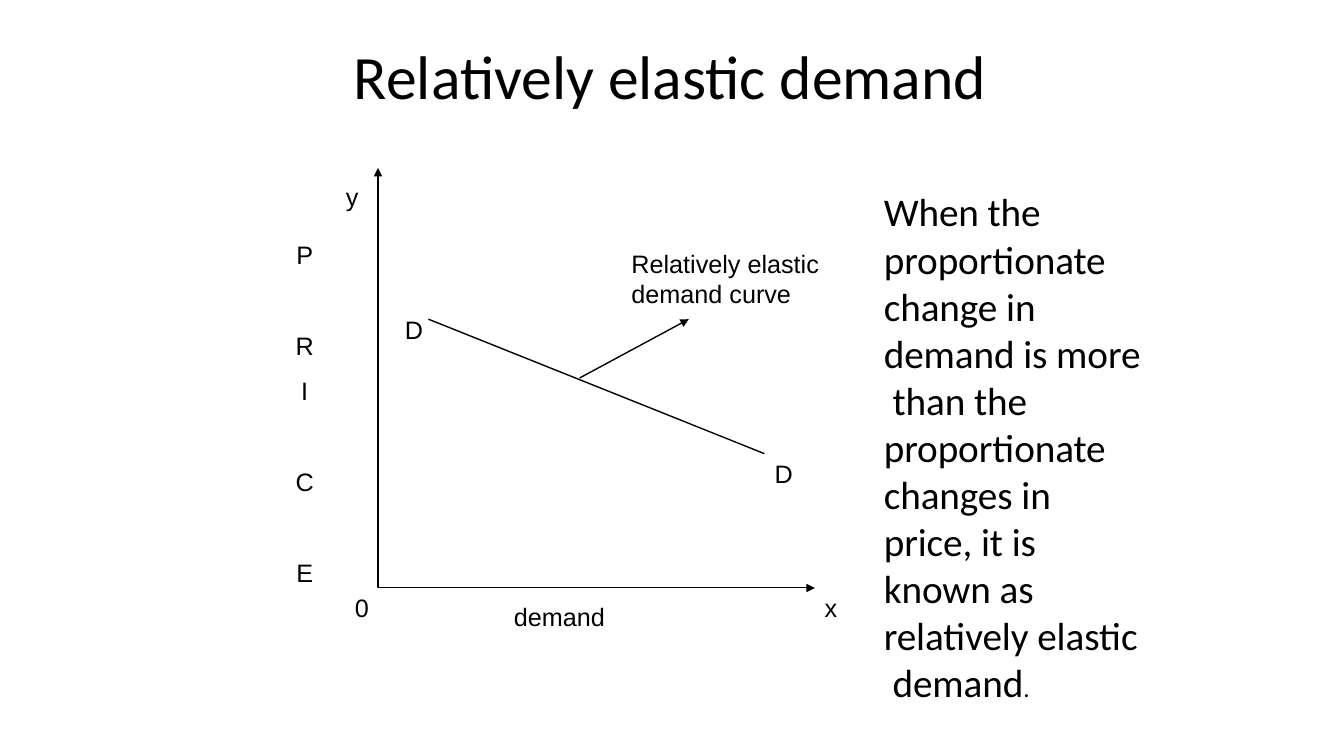
from pptx import Presentation
from pptx.dml.color import RGBColor
from pptx.enum.shapes import MSO_CONNECTOR
from pptx.enum.text import MSO_ANCHOR, PP_ALIGN
from pptx.oxml.ns import qn
from pptx.util import Pt
from lxml.etree import SubElement

BLACK = "000000"
LINE_RATIO = 1.2


def color(hex_value):
    return RGBColor.from_string(hex_value)


def format_font(font, name, size):
    font.name = name
    font.size = Pt(size)
    font.color.rgb = color(BLACK)


def add_text(slide, text, left, top, width, height, font="Arial", size=18,
             align=PP_ALIGN.LEFT, anchor=MSO_ANCHOR.TOP, line=None, gaps=None,
             spacing=0):
    shape = slide.shapes.add_textbox(Pt(left), Pt(top), Pt(width), Pt(height))
    frame = shape.text_frame
    frame.margin_left = frame.margin_right = 0
    frame.margin_top = frame.margin_bottom = 0
    frame.word_wrap = True
    frame.vertical_anchor = anchor
    frame.text = text
    for index, paragraph in enumerate(frame.paragraphs):
        paragraph.alignment = align
        paragraph.line_spacing = Pt(line or size * LINE_RATIO)
        if gaps and gaps[index]:
            paragraph.space_before = Pt(gaps[index])
        for run in paragraph.runs:
            format_font(run.font, font, size)
            if spacing:
                run._r.get_or_add_rPr().set("spc", str(round(spacing * 100)))
    return shape


def format_line(line, width):
    line.color.rgb = color(BLACK)
    line.width = Pt(width)


def add_line(slide, start, end, arrow=False):
    connector = slide.shapes.add_connector(
        MSO_CONNECTOR.STRAIGHT, *(Pt(value) for value in (*start, *end)))
    format_line(connector.line, 1)
    properties = connector._element.spPr
    if arrow:
        SubElement(properties.find(qn("a:ln")), qn("a:tailEnd"), type="triangle")
    SubElement(properties, qn("a:effectLst"))


def add_axes(slide, left, top, width, height):
    builder = slide.shapes.build_freeform(Pt(left), Pt(top))
    builder.add_line_segments(
        [(Pt(left), Pt(top + height)), (Pt(left + width), Pt(top + height))],
        close=False)
    axes = builder.convert_to_shape()
    axes.shadow.inherit = False
    axes.fill.background()
    format_line(axes.line, 0.75)
    line = axes._element.spPr.find(qn("a:ln"))
    for end in ("a:headEnd", "a:tailEnd"):
        SubElement(line, qn(end), type="triangle")


def add_title(slide, left, top, width, height):
    add_text(slide, "Relatively elastic demand", left, top, width, height,
             font="Calibri", size=44, align=PP_ALIGN.CENTER,
             anchor=MSO_ANCHOR.MIDDLE)


def add_demand_diagram(slide, left, top, width, height):
    def at(x, y):
        return left + x, top + y

    add_axes(slide, left, top, width, height)
    add_line(slide, at(36, 108), at(276, 204))
    add_line(slide, at(144, 150), at(222, 108), arrow=True)

    labels = [
        ("Relatively elastic\ndemand curve", 181, 57.3, 142, 44),
        ("demand", 97, height + 9.3, 72, 22),
        ("0", -16.5, height + 2.8, 14, 22),
        ("x", width + 7, height + 2.8, 14, 22),
        ("y", -23, 9.3, 14, 22),
        ("D", 19.3, 104.3, 16, 22),
        ("D", 283.3, 207.3, 16, 22),
    ]
    for text, x, y, label_width, label_height in labels:
        add_text(slide, text, *at(x, y), label_width, label_height)

    row = 32.4
    add_text(slide, "P\nR\nI\nC\nE", *at(-60.3, 40.3), 16, 8 * row,
             align=PP_ALIGN.CENTER, line=row, gaps=[0, row, 0, row, row])


def add_definition(slide, left, top, width, height):
    lines = ["When the", "proportionate", "change in", "demand is more",
             " than the", "proportionate", "changes in", "price, it is",
             "known as", "relatively elastic", " demand"]
    shape = add_text(slide, "\v".join(lines), left, top, width, height,
                     font="Calibri", size=28, spacing=-0.05)
    period = shape.text_frame.paragraphs[0].add_run()
    period.text = "."
    format_font(period.font, "Calibri", 18)


def main():
    presentation = Presentation()
    presentation.slide_width = Pt(960)
    presentation.slide_height = Pt(540)
    slide = presentation.slides.add_slide(presentation.slide_layouts[6])
    add_title(slide, 237, 26, 484, 55)
    add_demand_diagram(slide, 270, 120, 312, 300)
    add_definition(slide, 631.3, 134.2, 195, 371)
    presentation.save("out.pptx")


if __name__ == "__main__":
    main()
